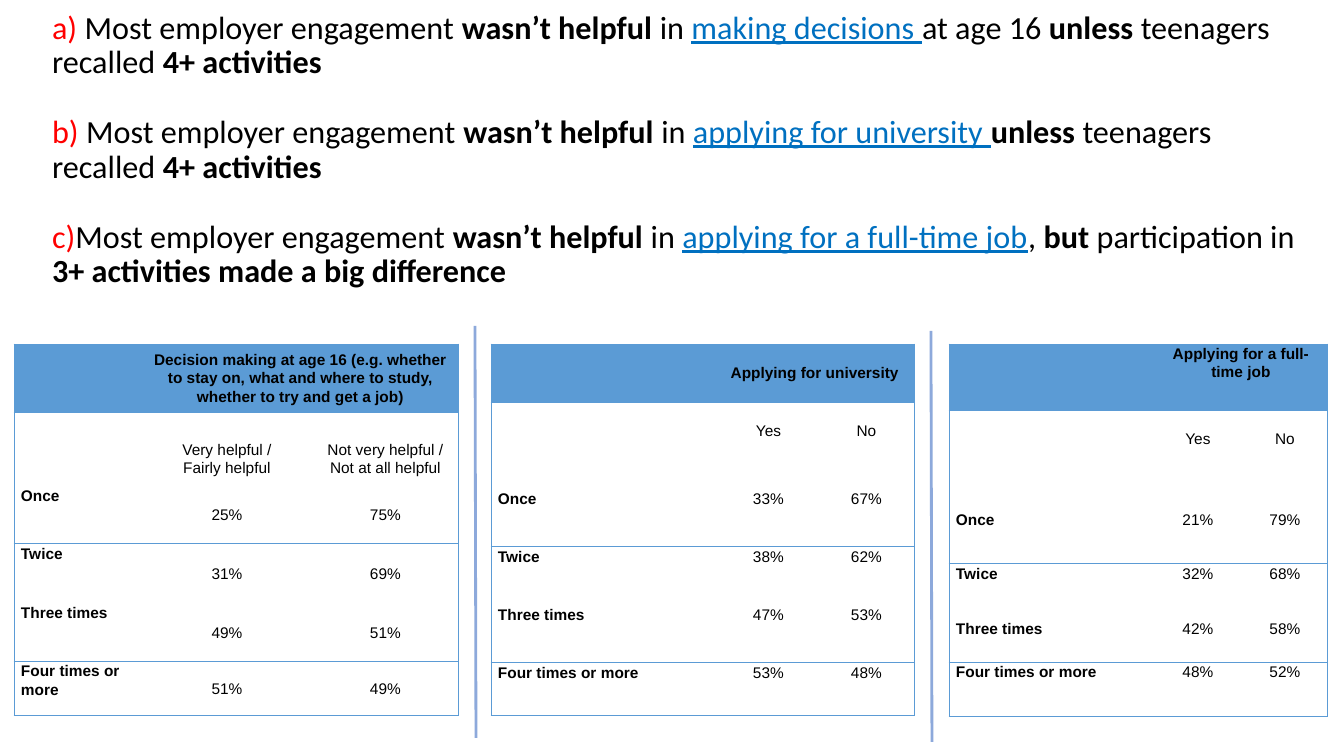
from pptx import Presentation
from pptx.dml.color import RGBColor as RGB
from pptx.enum.shapes import MSO_CONNECTOR as Link
from pptx.enum.text import MSO_ANCHOR as Anchor, MSO_AUTO_SIZE as Fit, PP_ALIGN as Align
from pptx.oxml import parse_xml
from pptx.oxml.ns import nsdecls
from pptx.util import Emu, Pt

BLACK = RGB(0x00, 0x00, 0x00)
RED = RGB(0xFF, 0x00, 0x00)
BLUE = RGB(0x00, 0x70, 0xC0)
HEAD = RGB(0x5B, 0x9B, 0xD5)
RULE = RGB(0x8D, 0xA9, 0xDB)
SCALE = 914400 / 100.8

MARK = {"color": RED}
PLAIN = {"color": BLACK}
BOLD = {"color": BLACK, "bold": True}
TOPIC = {"color": BLUE, "underline": True}

POINTS = [
    [("a)", MARK), (" Most employer engagement ", PLAIN), ("wasn’t helpful", BOLD),
     (" in ", PLAIN), ("making decisions ", TOPIC), ("at age 16 ", PLAIN),
     ("unless ", BOLD), ("teenagers recalled ", PLAIN), ("4+ activities", BOLD)],
    [("b)", MARK), (" Most employer engagement ", PLAIN), ("wasn’t helpful ", BOLD),
     ("in ", PLAIN), ("applying for university ", TOPIC), ("unless ", BOLD),
     ("teenagers recalled ", PLAIN), ("4+ activities", BOLD)],
    [("c)", MARK), ("Most employer engagement ", PLAIN), ("wasn’t helpful ", BOLD),
     ("in ", PLAIN), ("applying for a full-time job", TOPIC), (", ", PLAIN),
     ("but ", BOLD), ("participation in ", PLAIN),
     ("3+ activities made a big difference", BOLD)],
]

TIMES = ["Once", "Twice", "Three times", "Four times or more"]
YES_NO = ["Yes", "No"]
TABLES = [
    {"left": 14, "cols": [128, 170, 147], "rows": [68, 74, 58, 59, 59, 54],
     "head": "Decision making at age 16 (e.g. whether to stay on, "
             "what and where to study, whether to try and get a job)",
     "sub": ["Very helpful /\nFairly helpful", "Not very helpful /\nNot at all helpful"],
     "data": [(25, 75), (31, 69), (49, 51), (51, 49)],
     "top": Anchor.MIDDLE, "body": Anchor.MIDDLE},
    {"left": 491, "cols": [228, 99, 97], "rows": [58, 87, 58, 58, 58, 53],
     "head": "Applying for university ", "sub": YES_NO,
     "data": [(33, 67), (38, 62), (47, 53), (53, 48)],
     "top": Anchor.MIDDLE, "body": Anchor.TOP},
    {"left": 949, "cols": [205, 88, 86], "rows": [66, 100, 54, 55, 44, 54],
     "head": "Applying for a full-time job", "sub": YES_NO,
     "data": [(21, 79), (32, 68), (42, 58), (48, 52)],
     "top": Anchor.TOP, "body": Anchor.TOP},
]
RULES = [(475, 326, 476, 738), (931, 331, 932, 742)]
LINED = {0, 1, 3, 5, 6}


def px(num):
    return Emu(round(num * SCALE))


def put(item, form):
    for key, val in form.items():
        if key == "color":
            item.color.rgb = val
        else:
            setattr(item, key, val)


class Deck:
    """Hold the style and the current slide, and draw each kind of element."""

    def __init__(self):
        self.prs = Presentation()
        put(self.prs, {"slide_width": px(1344), "slide_height": px(756)})
        self.slide = self.prs.slides.add_slide(self.prs.slide_layouts[5])
        self.large = {"name": "Calibri", "size": Pt(23)}
        self.small = {"name": "Arial", "size": Pt(11), "color": BLACK}

    def title(self, box, points):
        shape = self.slide.shapes.title
        put(shape, dict(zip(("left", "top", "width", "height"), map(px, box))))
        frame = shape.text_frame
        put(frame, {"auto_size": Fit.NONE, "word_wrap": True,
                    "vertical_anchor": Anchor.MIDDLE})
        for num, point in enumerate(points):
            para = frame.add_paragraph() if num else frame.paragraphs[0]
            put(para, {"alignment": Align.LEFT, "line_spacing": 0.9,
                       "space_before": Pt(25 if num else 0)})
            for text, form in point:
                run = para.add_run()
                run.text = text
                put(run.font, {"bold": False, **self.large, **form})

    def rule(self, ends):
        line = self.slide.shapes.add_connector(Link.STRAIGHT, *map(px, ends))
        put(line.line, {"width": Pt(2)})
        line.line.color.rgb = RULE
        line._element.spPr.append(parse_xml(f"<a:effectLst {nsdecls('a')}/>"))

    def edge(self, cell, sides):
        props = cell._tc.get_or_add_tcPr()
        for side, shown in sides.items():
            fill = (f'<a:solidFill><a:srgbClr val="{HEAD}"/></a:solidFill>'
                    if shown else "<a:noFill/>")
            props.append(parse_xml(
                f'<a:ln{side} {nsdecls("a")} w="9525">{fill}</a:ln{side}>'))

    def cell(self, cell, text, bold, align, anchor, top=0):
        put(cell, {"margin_left": px(7), "margin_right": px(7), "margin_top": px(top),
                   "margin_bottom": 0, "vertical_anchor": anchor})
        frame = cell.text_frame
        for num, line in enumerate(text.split("\n")):
            para = frame.add_paragraph() if num else frame.paragraphs[0]
            put(para, {"alignment": align, "line_spacing": 1.07})
            run = para.add_run()
            run.text = line
            put(run.font, {**self.small, "bold": bold})

    def table(self, left, cols, rows, head, sub, data, top, body):
        table = self.slide.shapes.add_table(
            len(rows), len(cols), px(left), px(344), px(sum(cols)), px(sum(rows))).table
        put(table, {"first_row": False, "horz_banding": False})
        for col, width in zip(table.columns, cols):
            col.width = px(width)
        for row, height in zip(table.rows, rows):
            row.height = px(height)
        last = len(cols) - 1
        table.cell(0, 1).merge(table.cell(0, last))
        for r in range(len(rows)):
            for c in range(len(cols)):
                cell = table.cell(r, c)
                self.edge(cell, {"L": c == 0, "R": c == last or (r == 0 and c == 1),
                                 "T": r in LINED, "B": r + 1 in LINED})
                if r == 0:
                    cell.fill.solid()
                    cell.fill.fore_color.rgb = HEAD
                else:
                    cell.fill.background()
        self.cell(table.cell(0, 1), head, True, Align.CENTER, top)
        for c, text in enumerate(sub, 1):
            self.cell(table.cell(1, c), text, False, Align.CENTER, body, 19)
        for r, (name, pair) in enumerate(zip(TIMES, data), 2):
            self.cell(table.cell(r, 0), name, True, Align.LEFT, Anchor.TOP)
            for c, num in enumerate(pair, 1):
                self.cell(table.cell(r, c), f"{num}%", False, Align.CENTER, body)


def main():
    deck = Deck()
    deck.title((42, 17, 1277, 267), POINTS)
    for table in TABLES:
        deck.table(**table)
    for ends in RULES:
        deck.rule(ends)
    deck.prs.save("out.pptx")


if __name__ == "__main__":
    main()
